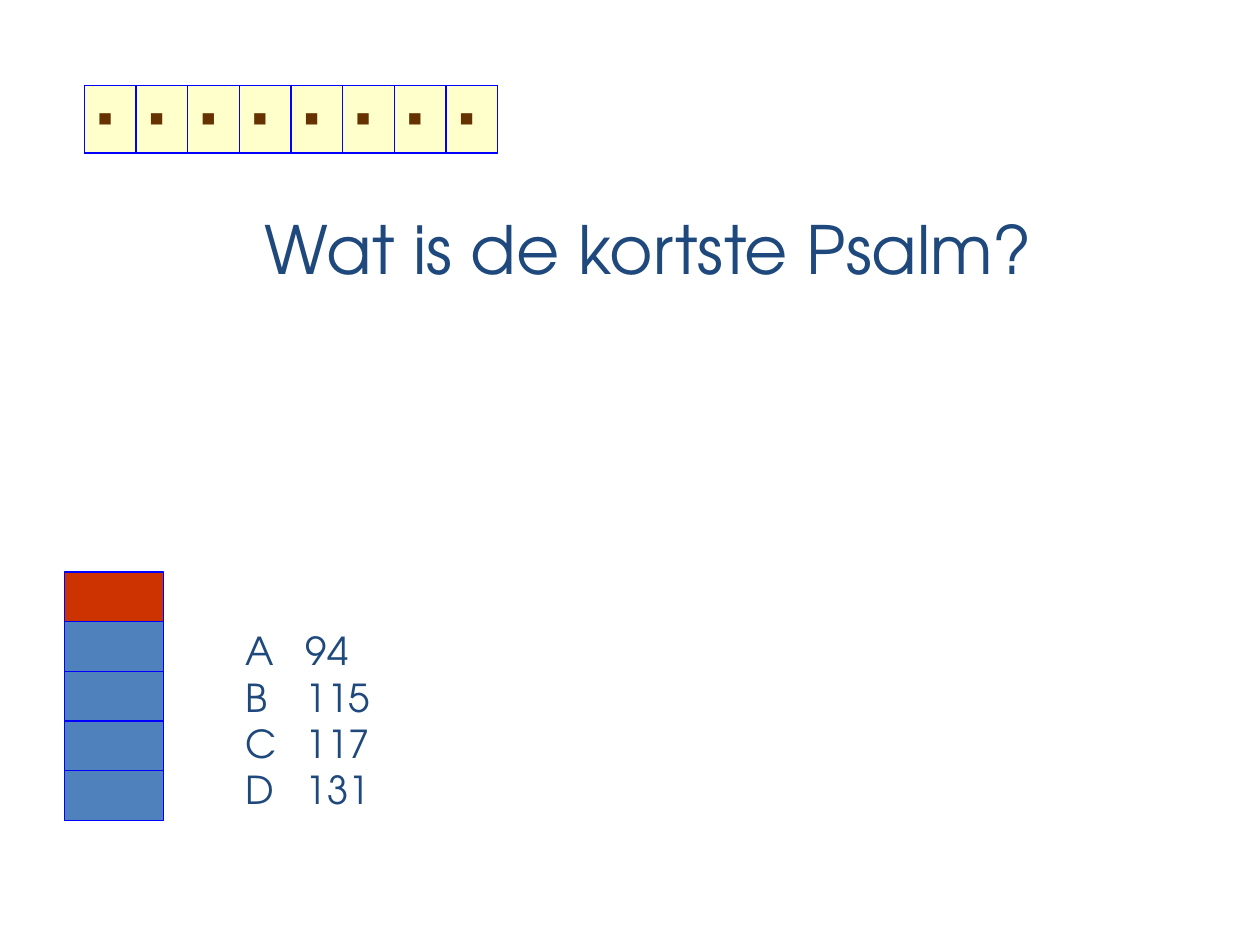
from dataclasses import dataclass

from lxml.etree import SubElement
from pptx import Presentation
from pptx.dml.color import RGBColor as RGB
from pptx.enum.shapes import MSO_SHAPE as SHAPE
from pptx.enum.text import MSO_ANCHOR as ANCHOR, MSO_AUTO_SIZE as AUTOSIZE, PP_ALIGN as ALIGN
from pptx.oxml.ns import qn
from pptx.util import Inches, Pt


@dataclass(frozen=True)
class Theme:
    """Colours, fonts and type sizes of the quiz slide."""
    text: str = "1F497D"
    line: str = "0000FF"
    block: str = "4F81BD"
    top_block: str = "CC3300"
    cell: str = "FFFFCC"
    mark: str = "663300"
    font: str = "TeX Gyre Adventor"
    mark_font: str = "Arial"
    question_size: int = 38
    answer_size: int = 22
    mark_size: int = 26


THEME = Theme()


def add_run(p, text, font, size, color):
    """Append a formatted run to a paragraph."""
    r = p.add_run()
    r.text = text
    r.font.name, r.font.size = font, Pt(size)
    r.font.color.rgb = RGB.from_string(color)


def add_question(s, box, text):
    """Place the question in the title placeholder."""
    sp = s.shapes.title
    sp.left, sp.top, sp.width, sp.height = map(Inches, box)
    tf = sp.text_frame
    tf.word_wrap, tf.auto_size = True, AUTOSIZE.NONE
    tf.vertical_anchor = ANCHOR.TOP
    p = tf.paragraphs[0]
    p.alignment = ALIGN.CENTER
    add_run(p, text, THEME.font, THEME.question_size, THEME.text)


def add_blocks(s, box, colors):
    """Stack equal blocks in the box, one for each colour from the top."""
    left, top, width, height = box
    step = height / len(colors)
    for i, color in enumerate(colors):
        sp = s.shapes.add_shape(SHAPE.RECTANGLE, Inches(left), Inches(top + i * step),
                                Inches(width), Inches(step))
        sp.shadow.inherit = False
        sp.fill.solid()
        sp.fill.fore_color.rgb = RGB.from_string(color)
        sp.line.color.rgb = RGB.from_string(THEME.line)
        sp.line.width = Pt(0.75)


def add_answers(s, box, answers, tab):
    """List the lettered answers, aligned at a tab stop."""
    tf = s.shapes.add_textbox(*map(Inches, box)).text_frame
    tf.word_wrap, tf.auto_size = True, AUTOSIZE.SHAPE_TO_FIT_TEXT
    for i, (letter, answer) in enumerate(answers.items()):
        p = tf.add_paragraph() if i else tf.paragraphs[0]
        tabs = SubElement(p._p.get_or_add_pPr(), qn("a:tabLst"))
        SubElement(tabs, qn("a:tab"), pos=str(Inches(tab)), algn="l")
        add_run(p, f"{letter}\t{answer}", THEME.font, THEME.answer_size, THEME.text)


def add_borders(cell):
    """Draw a line on all four sides of a table cell."""
    tc_pr = cell._tc.get_or_add_tcPr()
    for side in ("lnL", "lnR", "lnT", "lnB"):
        ln = SubElement(tc_pr, qn(f"a:{side}"), w=str(Pt(1)))
        fill = SubElement(ln, qn("a:solidFill"))
        SubElement(fill, qn("a:srgbClr"), val=THEME.line)


def add_marks(s, box, count):
    """Fill a one-row table with square marks."""
    table = s.shapes.add_table(1, count, *map(Inches, box)).table
    table.first_row = table.horz_banding = False
    for column, cell in zip(table.columns, table.iter_cells()):
        column.width = Inches(box[2] / count)
        add_borders(cell)
        cell.fill.solid()
        cell.fill.fore_color.rgb = RGB.from_string(THEME.cell)
        add_run(cell.text_frame.paragraphs[0], "▪", THEME.mark_font, THEME.mark_size, THEME.mark)


def main():
    """Build and save the quiz slide."""
    prs = Presentation()
    prs.slide_width, prs.slide_height = Inches(10), Inches(7.5)
    s = prs.slides.add_slide(prs.slide_layouts[5])
    add_blocks(s, (0.51, 4.54, 0.79, 1.97), [THEME.top_block] + [THEME.block] * 4)
    add_answers(s, (1.85, 4.93, 3.31, 1.58), {"A": 94, "B": 115, "C": 117, "D": 131}, 0.48)
    add_question(s, (0.98, 1.6, 8.34, 1.99), "Wat is de kortste Psalm?")
    add_marks(s, (0.67, 0.68, 3.28, 0.53), 8)
    prs.save("out.pptx")


if __name__ == "__main__":
    main()
